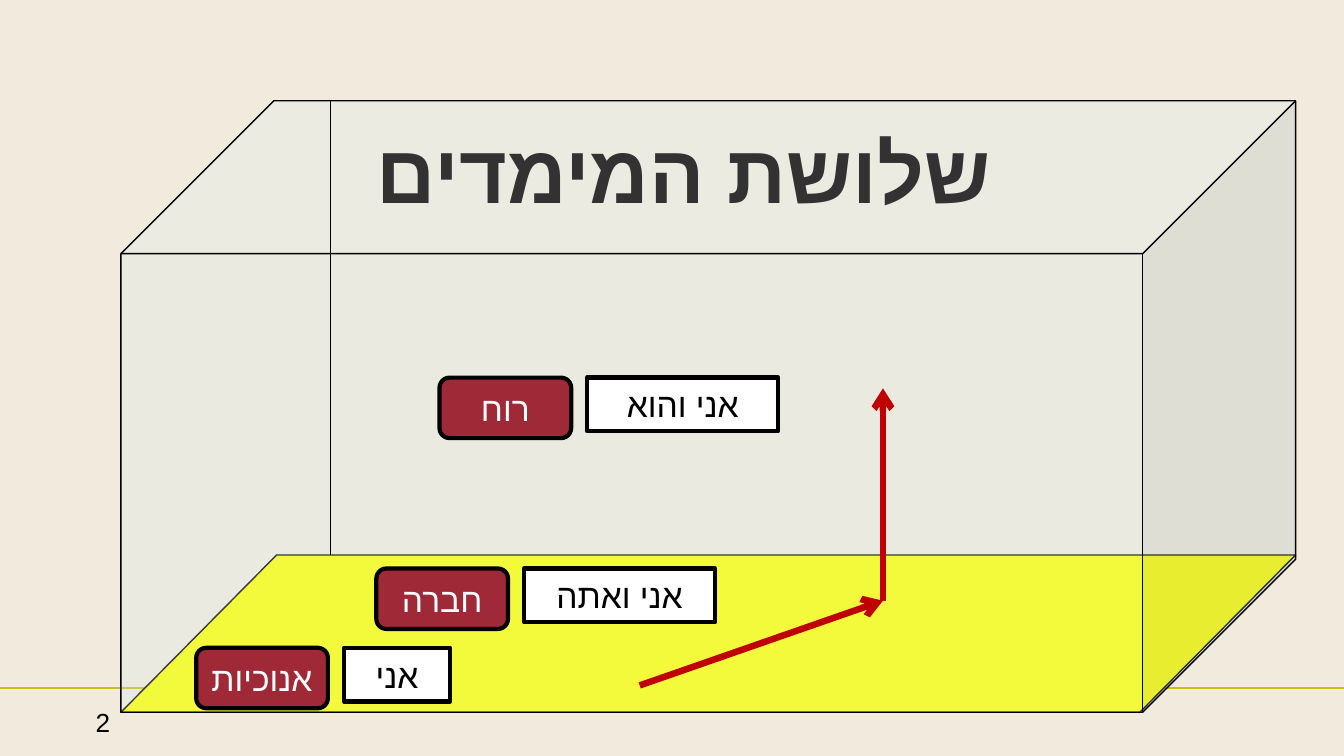
import pptx
import pptx.util
import pptx.dml.color
import pptx.enum.shapes
import pptx.enum.text
import pptx.oxml.ns
import lxml.etree

Inches = pptx.util.Inches
SHAPES = pptx.enum.shapes.MSO_SHAPE
FONT = "Arial"
WIDTH = 10
HEIGHT = WIDTH * 9 / 16
DIMENSIONS = [
    (1.46, 4.82, 0.79, "אנוכיות", "אני"),
    (2.8, 4.23, 1.42, "חברה", "אני ואתה"),
    (3.27, 2.81, 1.42, "רוח", "אני והוא"),
]


def color(value):
    return pptx.dml.color.RGBColor.from_string(value)


def add_child(parent, tag, **attributes):
    return lxml.etree.SubElement(parent, pptx.oxml.ns.qn(tag), **attributes)


def set_line(line, value, width):
    line.color.rgb = color(value)
    line.width = pptx.util.Pt(width)


def write(box, text, size, value, bold=False):
    frame = box.text_frame
    layout = {
        "word_wrap": True,
        "vertical_anchor": pptx.enum.text.MSO_ANCHOR.MIDDLE,
        "margin_left": Inches(0.05),
        "margin_right": Inches(0.05),
        "margin_top": Inches(0.05),
        "margin_bottom": Inches(0.05),
    }
    for name, setting in layout.items():
        setattr(frame, name, setting)
    para = frame.paragraphs[0]
    para.alignment = pptx.enum.text.PP_ALIGN.CENTER
    para._p.get_or_add_pPr().set("rtl", "1")
    span = para.add_run()
    span.text = text
    span.font.color.rgb = color(value)
    for name, setting in {"name": FONT, "size": pptx.util.Pt(size), "bold": bold}.items():
        setattr(span.font, name, setting)
    add_child(span._r.get_or_add_rPr(), "a:cs", typeface=FONT)


def add_text(page, left, top, width, height, text, size, value, bold=False):
    box = page.shapes.add_textbox(Inches(left), Inches(top), Inches(width), Inches(height))
    write(box, text, size, value, bold)


def add_solid(page, kind, left, top, width, height, fill, line_width):
    shape = page.shapes.add_shape(kind, Inches(left), Inches(top), Inches(width), Inches(height))
    shape.shadow.inherit = False
    shape.fill.solid()
    shape.fill.fore_color.rgb = color(fill)
    set_line(shape.line, "000000", line_width)
    return shape


def add_line(page, start, end, value, width, arrow=False):
    line = page.shapes.add_connector(
        pptx.enum.shapes.MSO_CONNECTOR.STRAIGHT, *map(Inches, start + end))
    set_line(line.line, value, width)
    if arrow:
        add_child(line.line._get_or_add_ln(), "a:tailEnd", type="arrow")
    add_child(line._element.spPr, "a:effectLst")


def add_footer(page, width, top):
    add_text(page, -0.4, top + 0.06, 2.33, 0.39, "2", 14, "000000")
    add_line(page, (0, top), (width, top), "CBBE0F", 1.5)


def add_space(page, left, top, width, height):
    floor_height = 1.17
    floor_top = top + height - floor_height
    floor = add_solid(page, SHAPES.PARALLELOGRAM, left, floor_top, width, floor_height, "FFFF00", 0.75)
    floor.adjustments[0] = 0.99
    cube = add_solid(page, SHAPES.CUBE, left, top, width, height, "D0EAEC", 0.75)
    cube.adjustments[0] = 0.25
    tint = cube._element.spPr.find(".//" + pptx.oxml.ns.qn("a:srgbClr"))
    add_child(tint, "a:alpha", val="25000")
    edge = left + 1.56
    add_line(page, (edge, floor_top), (edge, top), "000000", 0.75)


def add_dimension(page, left, top, phrase_width, name, phrase):
    name_width, gap = 0.98, 0.12
    box = add_solid(page, SHAPES.RECTANGLE, left + name_width + gap, top, phrase_width, 0.4, "FFFFFF", 2.25)
    write(box, phrase, 18, "000000")
    box = add_solid(page, SHAPES.FLOWCHART_ALTERNATE_PROCESS, left, top, name_width, 0.45, "9F2936", 2.25)
    write(box, name, 18, "FFFFFF")


def add_title(page, left, top, width, height):
    add_text(page, left, top, width, height, "שלושת המימדים", 44, "323232", bold=True)


def add_path(page, points):
    for start, end in zip(points, points[1:]):
        add_line(page, start, end, "C00000", 3.5, arrow=True)


def main():
    deck = pptx.Presentation()
    deck.slide_width, deck.slide_height = Inches(WIDTH), Inches(HEIGHT)
    page = deck.slides.add_slide(deck.slide_layouts[6])
    page.background.fill.solid()
    page.background.fill.fore_color.rgb = color("F3EADE")
    add_footer(page, WIDTH, 5.12)
    add_space(page, 0.9, 0.75, 8.74, 4.55)
    for dimension in DIMENSIONS:
        add_dimension(page, *dimension)
    add_title(page, 0.59, 0.8, 9, 0.94)
    add_path(page, [(4.76, 5.1), (6.57, 4.47), (6.57, 2.89)])
    deck.save("out.pptx")


if __name__ == "__main__":
    main()
